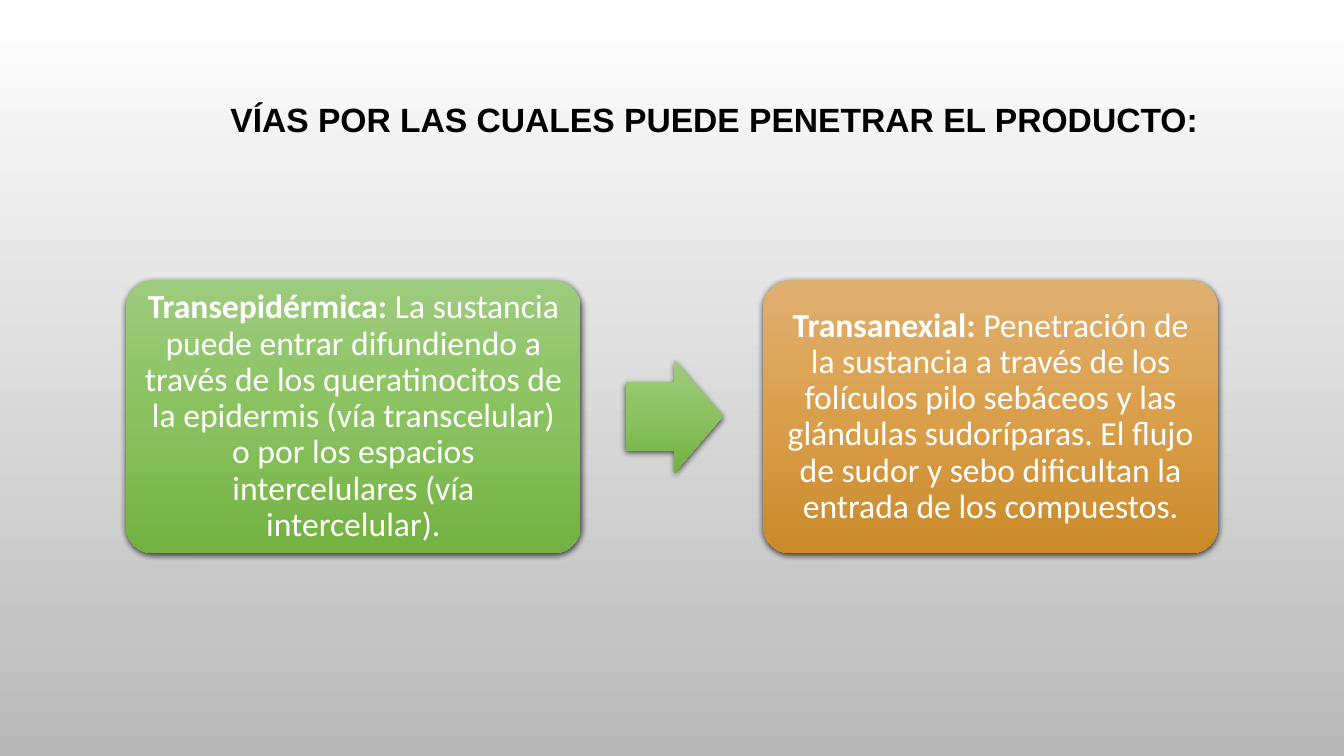
"""Build a slide on the two ways a product can enter the skin."""
from copy import deepcopy
from typing import NamedTuple

from lxml.etree import SubElement
from pptx import Presentation
from pptx.dml.color import RGBColor as Rgb
from pptx.enum.shapes import MSO_SHAPE as Kind
from pptx.enum.text import MSO_ANCHOR as Anchor, PP_ALIGN as Align
from pptx.oxml.ns import qn
from pptx.util import Inches, Pt

GREEN = ("9ECC7E", "8AC25F", "73B142")
AMBER = ("E0B071", "DA9F4B", "C98A29")


class Block(NamedTuple):
    kind: Kind
    left: float
    top: float
    width: float
    height: float
    bends: tuple
    tints: tuple
    head: str = ""
    body: str = ""


BLOCKS = (
    Block(Kind.ROUNDED_RECTANGLE, 1.25, 2.78, 4.51, 2.71, (0.1,), GREEN,
          "Transepidérmica: ",
          "La sustancia puede entrar difundiendo a través de los queratinocitos "
          "de la epidermis (vía transcelular) o por los espacios intercelulares "
          "(vía intercelular)."),
    Block(Kind.RIGHT_ARROW, 6.21, 3.57, 0.96, 1.12, (0.6, 0.5), GREEN),
    Block(Kind.ROUNDED_RECTANGLE, 7.57, 2.78, 4.51, 2.71, (0.1,), AMBER,
          "Transanexial: ",
          "Penetración de la sustancia a través de los folículos pilo sebáceos "
          "y las glándulas sudoríparas. El flujo de sudor y sebo dificultan la "
          "entrada de los compuestos."),
)


def tint(color, code: str) -> None:
    color.rgb = Rgb.from_string(code)


def apply(item, style: dict) -> None:
    for name, value in style.items():
        setattr(item, name, value)


def shade(fill, first: str, last: str) -> None:
    fill.gradient()
    fill.gradient_angle = 270
    for stop, code, spot in zip(fill.gradient_stops, (first, last), (0, 1)):
        tint(stop.color, code)
        stop.position = spot


def blend(shape, tints: tuple) -> None:
    first, mid, last = tints
    shade(shape.fill, first, last)
    stops = shape.element.spPr.find(".//" + qn("a:gsLst"))
    stops.insert(1, deepcopy(stops[0]))
    stop = shape.fill.gradient_stops[1]
    tint(stop.color, mid)
    stop.position = 0.5


def drop(shape) -> None:
    shape.shadow.inherit = False
    glow = SubElement(shape.element.spPr.find(qn("a:effectLst")), qn("a:outerShdw"),
                      blurRad="57150", dist="19050", dir="5400000",
                      algn="ctr", rotWithShape="0")
    black = SubElement(glow, qn("a:srgbClr"), val="000000")
    SubElement(black, qn("a:alpha"), val="69000")


def write(para, text: str, face: str, code: str, bold: bool) -> None:
    apply(para, {"alignment": Align.CENTER, "line_spacing": 0.9})
    run = para.add_run()
    run.text = text
    apply(run.font, {"name": face, "size": Pt(24), "bold": bold})
    tint(run.font.color, code)


def draw(slide, block: Block) -> None:
    spot = (block.left, block.top, block.width, block.height)
    shape = slide.shapes.add_shape(block.kind, *map(Inches, spot))
    for index, bend in enumerate(block.bends):
        shape.adjustments[index] = bend
    blend(shape, block.tints)
    shape.line.fill.background()
    drop(shape)
    if block.head:
        frame = shape.text_frame
        sides = ("margin_left", "margin_right", "margin_top", "margin_bottom")
        apply(frame, dict.fromkeys(sides, Inches(0.1)))
        apply(frame, {"word_wrap": True, "vertical_anchor": Anchor.MIDDLE})
        para = frame.paragraphs[0]
        para.space_after = Pt(8.4)
        write(para, block.head, "Calibri", "FFFFFF", True)
        write(para, block.body, "Calibri", "FFFFFF", False)


def name(slide) -> None:
    title = slide.shapes.title
    apply(title, {"left": Inches(1.67), "top": Inches(0.6),
                  "width": Inches(10.83), "height": Inches(1.62)})
    title.text_frame.vertical_anchor = Anchor.MIDDLE
    para = title.text_frame.paragraphs[0]
    write(para, "VÍAS POR LAS CUALES PUEDE PENETRAR EL PRODUCTO:",
          "Arial", "000000", True)
    para.add_line_break()
    SubElement(para._p[-1], qn("a:rPr"), sz="2400")
    SubElement(para._p, qn("a:endParaRPr"), sz="2400")


def main() -> None:
    deck = Presentation()
    apply(deck, {"slide_width": Inches(13.33), "slide_height": Inches(7.5)})
    slide = deck.slides.add_slide(deck.slide_layouts[5])
    shade(slide.background.fill, "FFFFFF", "B9B9B9")
    name(slide)
    for block in BLOCKS:
        draw(slide, block)
    deck.save("out.pptx")


if __name__ == "__main__":
    main()
